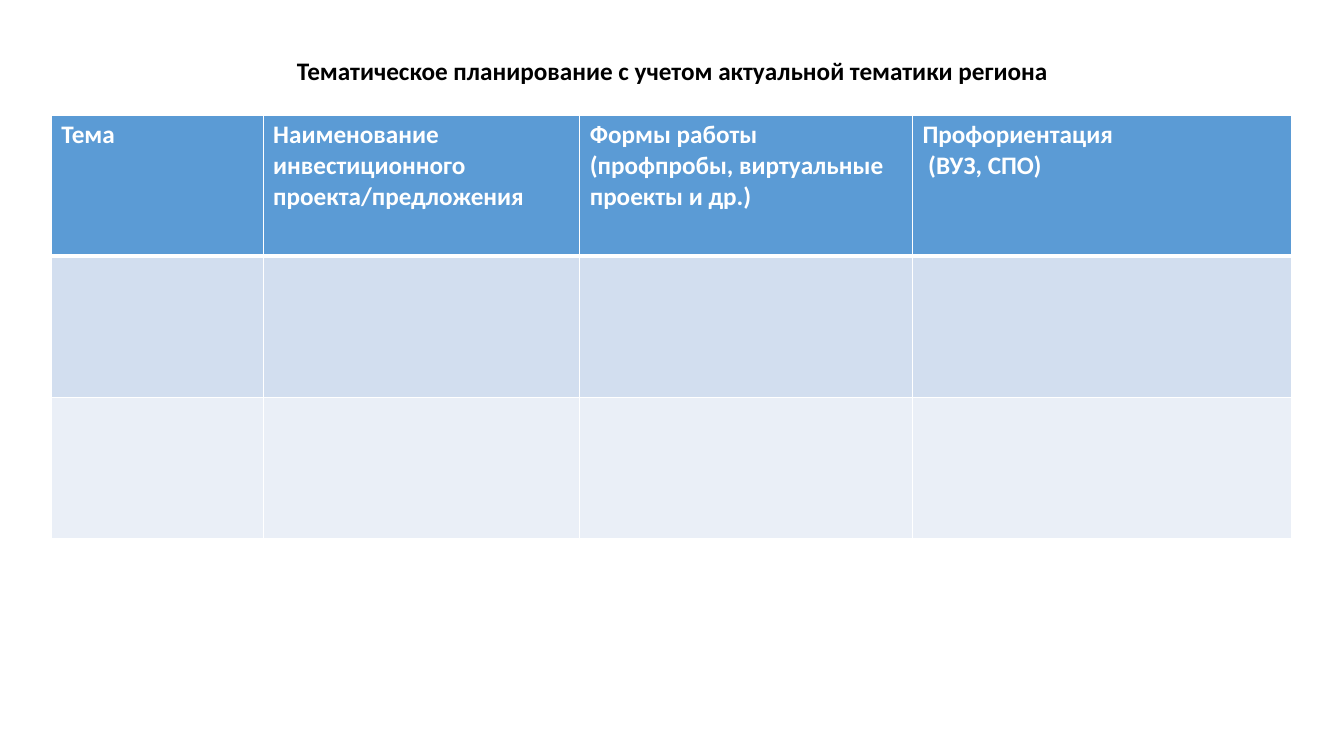
from pptx import Presentation
from pptx.dml.color import RGBColor
from pptx.enum.text import MSO_ANCHOR, PP_ALIGN
from pptx.oxml import parse_xml
from pptx.oxml.ns import nsdecls
from pptx.util import Inches, Pt

# Content
TITLE = "Тематическое планирование с учетом актуальной тематики региона"
HEADERS = [
    ["Тема"],
    ["Наименование инвестиционного проекта/предложения"],
    ["Формы работы (профпробы, виртуальные проекты и др.)"],
    ["Профориентация", " (ВУЗ, СПО)"],
]

# Layout and format
TITLE_BOX = (0.92, 0.4, 11.5, 0.64)
TABLE_LEFT, TABLE_TOP = 0.51, 1.14
COL_WIDTHS = [2.1, 3.14, 3.3, 3.76]
ROW_HEIGHT = 1.4
ROW_FILLS = ["5B9BD5", "D2DEEF", "EAEFF7"]
BORDER, THIN, THICK = "FFFFFF", 1, 3
FONT = {"name": "Calibri", "size": Pt(18), "bold": True}


def rgb(value):
    return RGBColor.from_string(value)


def write(p, text, color):
    r = p.add_run()
    r.text = text
    for key, value in FONT.items():
        setattr(r.font, key, value)
    r.font.color.rgb = rgb(color)


def set_borders(cell, widths):
    tc_pr = cell._tc.get_or_add_tcPr()
    for i, (side, width) in enumerate(widths.items()):
        tc_pr.insert(i, parse_xml(
            f'<a:ln{side} {nsdecls("a")} w="{Pt(width)}"><a:solidFill>'
            f'<a:srgbClr val="{BORDER}"/></a:solidFill></a:ln{side}>'))


prs = Presentation()
prs.slide_width, prs.slide_height = Inches(13.33), Inches(7.5)
s = prs.slides.add_slide(prs.slide_layouts[6])

# Title
tf = s.shapes.add_textbox(*map(Inches, TITLE_BOX)).text_frame
tf.word_wrap = True
tf.vertical_anchor = MSO_ANCHOR.MIDDLE
p = tf.paragraphs[0]
p.alignment, p.line_spacing = PP_ALIGN.CENTER, 0.9
write(p, TITLE, "000000")

# Table
table = s.shapes.add_table(
    len(ROW_FILLS), len(COL_WIDTHS), Inches(TABLE_LEFT), Inches(TABLE_TOP),
    Inches(sum(COL_WIDTHS)), Inches(ROW_HEIGHT * len(ROW_FILLS))).table
for col, width in zip(table.columns, COL_WIDTHS):
    col.width = Inches(width)

for i, (row, fill) in enumerate(zip(table.rows, ROW_FILLS)):
    row.height = Inches(ROW_HEIGHT)
    for cell in row.cells:
        cell.fill.solid()
        cell.fill.fore_color.rgb = rgb(fill)
        set_borders(cell, {"L": THIN, "R": THIN,
                           "T": THICK if i == 1 else THIN,
                           "B": THICK if i == 0 else THIN})

# Header text
for cell, lines in zip(table.rows[0].cells, HEADERS):
    tf = cell.text_frame
    for i, line in enumerate(lines):
        write(tf.add_paragraph() if i else tf.paragraphs[0], line, "FFFFFF")

prs.save("out.pptx")
